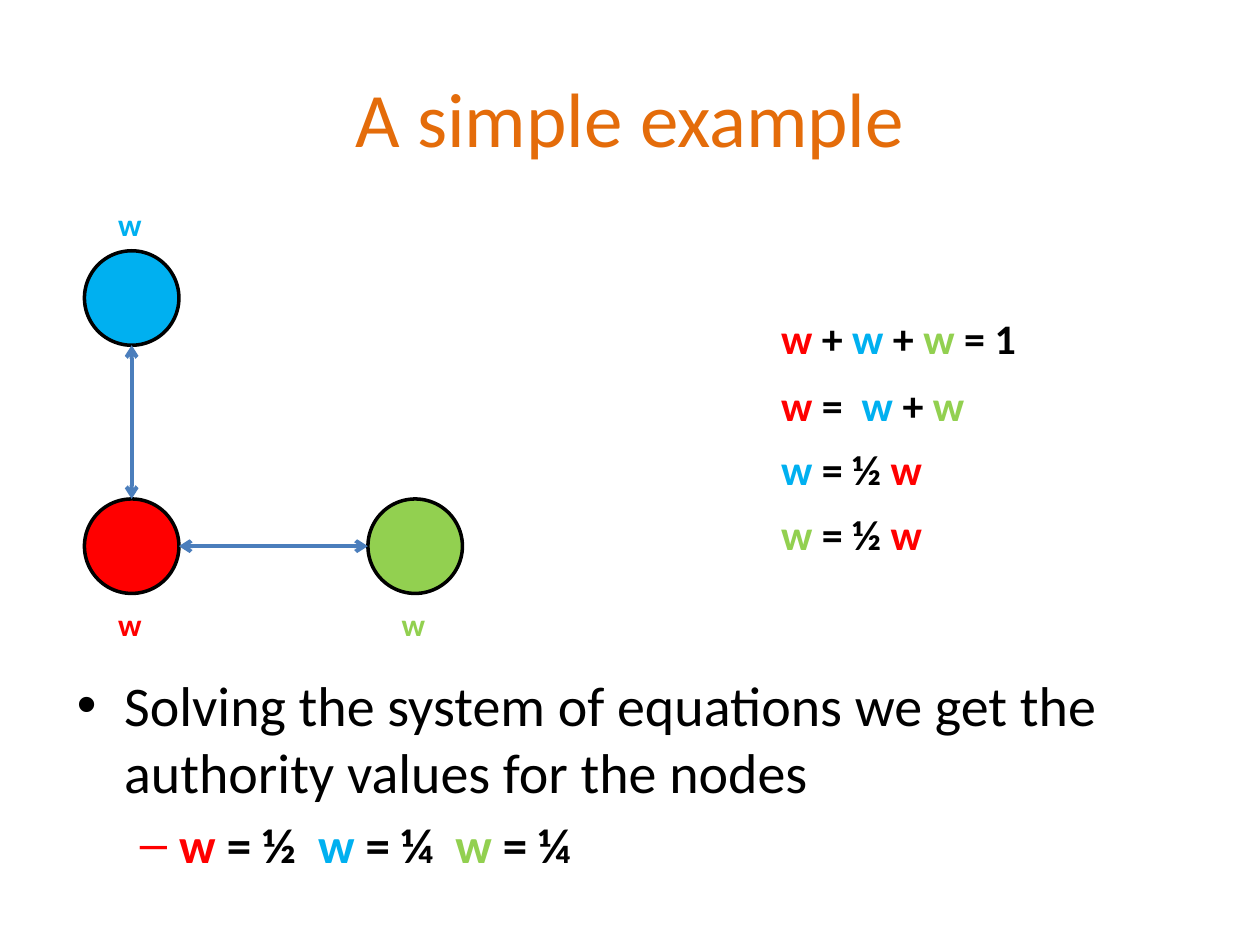
from dataclasses import dataclass

from lxml import etree
from pptx import Presentation
from pptx.dml.color import RGBColor
from pptx.enum import shapes, text
from pptx.oxml import ns
from pptx.util import Inches, Pt


@dataclass(frozen=True)
class Theme:
    font: str = "Calibri"
    title: str = "E46C0A"
    ink: str = "000000"
    red: str = "FF0000"
    blue: str = "00B0F0"
    green: str = "92D050"
    edge: str = "4B7EBC"
    head: int = 44
    body: int = 32
    sub: int = 28
    math: int = 24
    label: int = 18


T = Theme()
SIZE = 0.75  # node diameter


def style(para, size, color=T.ink, bold=False):
    font = para.font
    font.name, font.size, font.bold = T.font, Pt(size), bold
    font.color.rgb = RGBColor.from_string(color)


def write(para, parts, size):
    """Fill a bold paragraph with (text, colour) parts."""
    style(para, size, bold=True)
    for words, color in parts:
        run = para.add_run()
        run.text = words
        run.font.color.rgb = RGBColor.from_string(color)


def place(shape, x, y, w, h):
    shape.left, shape.top = Inches(x), Inches(y)
    shape.width, shape.height = Inches(w), Inches(h)


def add_text(slide, x, y, w, h, parts, size):
    box = slide.shapes.add_textbox(Inches(x), Inches(y), Inches(w), Inches(h))
    box.text_frame.word_wrap = True
    write(box.text_frame.paragraphs[0], parts, size)


def add_node(slide, x, y, color, drop):
    """Draw a circle with its weight label, drop inches below its top."""
    node = slide.shapes.add_shape(
        shapes.MSO_SHAPE.OVAL, Inches(x), Inches(y), Inches(SIZE), Inches(SIZE))
    node.shadow.inherit = False
    node.fill.solid()
    node.fill.fore_color.rgb = RGBColor.from_string(color)
    node.line.color.rgb = RGBColor.from_string(T.ink)
    node.line.width = Pt(2)
    add_text(slide, x + 0.17, y + drop, 0.4, 0.4, [("w", color)], T.label)


def add_edge(slide, *ends):
    """Draw a line from x, y to x, y with arrows at both ends."""
    edge = slide.shapes.add_connector(
        shapes.MSO_CONNECTOR.STRAIGHT, *map(Inches, ends))
    edge.line.color.rgb = RGBColor.from_string(T.edge)
    edge.line.width = Pt(2.25)
    line = edge.line._get_or_add_ln()
    for tag in ("a:headEnd", "a:tailEnd"):
        etree.SubElement(line, ns.qn(tag), type="arrow")
    etree.SubElement(edge._element.spPr, ns.qn("a:effectLst"))


def add_title(slide, words):
    title = slide.shapes.title
    place(title, 0.5, 0.3, 9, 1.25)
    title.text_frame.text = words
    style(title.text_frame.paragraphs[0], T.head, T.title)


def add_body(slide, point, parts):
    body = slide.placeholders[1]
    place(body, 0.51, 5.27, 8.99, 1.95)
    frame = body.text_frame
    frame.auto_size = text.MSO_AUTO_SIZE.NONE
    frame.text = point
    style(frame.paragraphs[0], T.body)
    sub = frame.add_paragraph()
    sub.level = 1
    write(sub, parts, T.sub)


def add_graph(slide):
    left, right, top, low = 0.67, 2.92, 1.99, 3.96
    mid = SIZE / 2
    add_node(slide, left, low, T.red, 0.79)
    add_node(slide, right, low, T.green, 0.79)
    add_node(slide, left, top, T.blue, -0.41)
    add_edge(slide, left + mid, low, left + mid, top + SIZE)
    add_edge(slide, left + SIZE, low + mid, right, low + mid)


def main():
    deck = Presentation()
    deck.slide_width, deck.slide_height = Inches(10), Inches(7.5)
    # Title and content layout: its body supplies the bullets
    slide = deck.slides.add_slide(deck.slide_layouts[1])
    add_title(slide, "A simple example")
    add_body(
        slide,
        "Solving the system of equations we get the authority values for the nodes",
        [("w ", T.red), ("= ½  ", T.ink), ("w", T.blue), (" = ¼  ", T.ink),
         ("w ", T.green), ("= ¼", T.ink)])
    add_graph(slide)

    # Equations
    plus = (" + ", T.ink)
    half = [("= ½ ", T.ink), ("w", T.red)]
    rows = (
        (2.43, [("w", T.red), plus, ("w", T.blue), plus, ("w", T.green),
                (" = 1", T.ink)]),
        (2.96, [("w", T.red), (" =  ", T.ink), ("w", T.blue), plus,
                ("w", T.green)]),
        (3.47, [("w ", T.blue), *half]),
        (3.99, [("w ", T.green), *half]),
    )
    for y, parts in rows:
        add_text(slide, 6.1, y, 2.41, 0.5, parts, T.math)

    deck.save("out.pptx")


if __name__ == "__main__":
    main()
